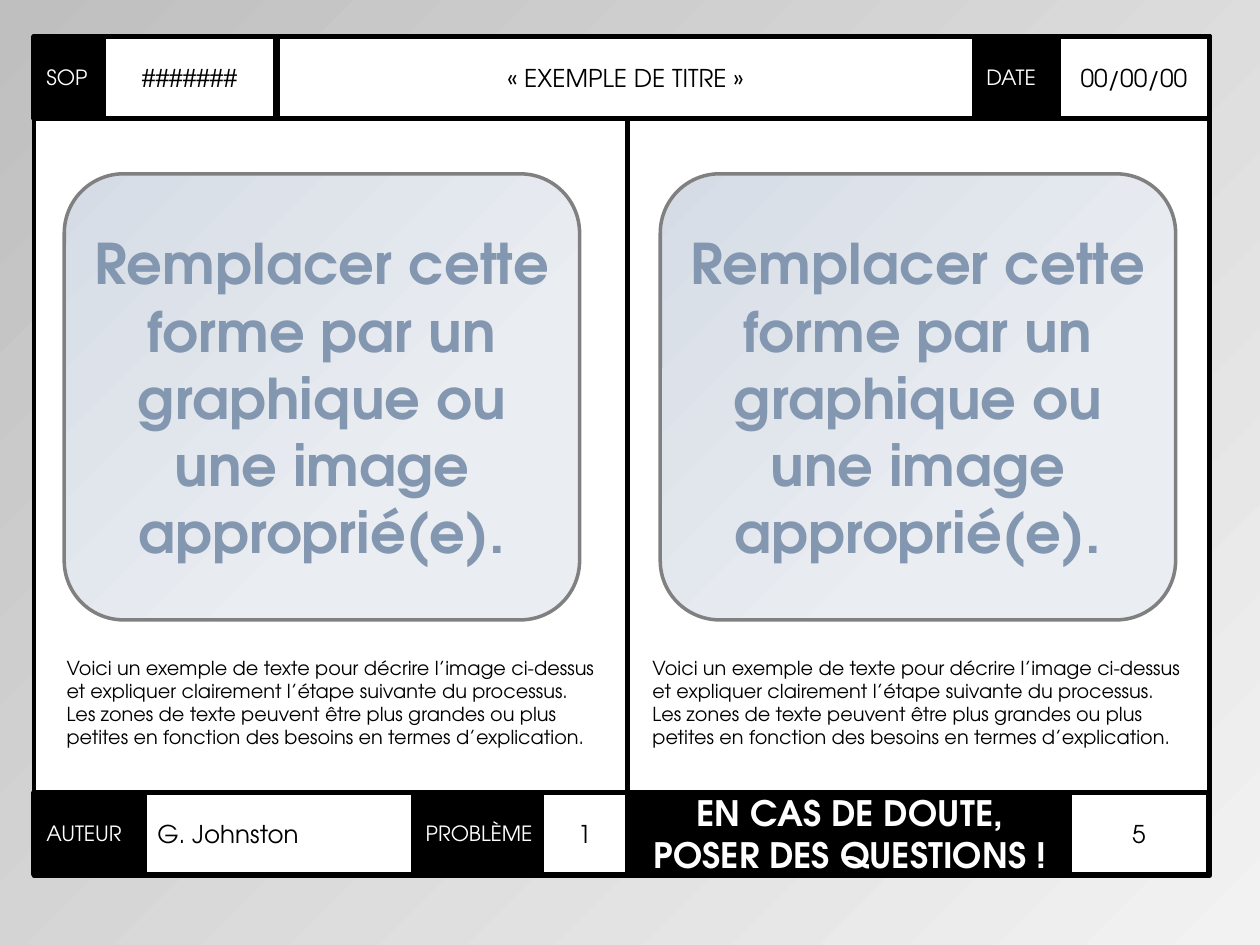
from lxml import etree
from pptx import Presentation
from pptx.dml.color import RGBColor
from pptx.enum.shapes import MSO_CONNECTOR, MSO_SHAPE
from pptx.enum.text import MSO_ANCHOR, MSO_AUTO_SIZE, PP_ALIGN
from pptx.oxml.ns import qn
from pptx.util import Inches, Pt

RECT, ROUND_RECT = MSO_SHAPE.RECTANGLE, MSO_SHAPE.ROUNDED_RECTANGLE
LEFT, CENTER = PP_ALIGN.LEFT, PP_ALIGN.CENTER
MIDDLE = MSO_ANCHOR.MIDDLE

FONT = "TeX Gyre Adventor"
BLACK = RGBColor(0x00, 0x00, 0x00)
WHITE = RGBColor(0xFF, 0xFF, 0xFF)
GREY = RGBColor(0x80, 0x80, 0x80)
SLATE = RGBColor(0x84, 0x97, 0xB0)
BLUE_LIGHT = RGBColor(0xEA, 0xEE, 0xF3)
BLUE_DARK = RGBColor(0xD6, 0xDC, 0xE5)
PAGE_LIGHT = RGBColor(0xF2, 0xF2, 0xF2)
PAGE_DARK = RGBColor(0xBF, 0xBF, 0xBF)

# Grid of the sheet, in inches
FRAME_X, FRAME_Y, FRAME_W, FRAME_H = 0.27, 0.29, 9.33, 6.66
ROW_H = 0.65
FOOTER_Y = 6.29
MIDDLE_X = 4.98
PANEL_Y = 1.38

PLACEHOLDER = "Remplacer cette forme par un graphique ou une image approprié(e)."
STEPS = [
    "Voici un exemple de texte pour décrire l’image ci-dessus et expliquer "
    "clairement l’étape suivante du processus.",
    "Les zones de texte peuvent être plus grandes ou plus petites en fonction "
    "des besoins en termes d’explication.",
]

# Text, left, width, is a black label, alignment, size
HEADER = [
    ("SOP", 0.27, 0.55, True, LEFT, 12),
    ("#######", 0.82, 1.37, False, CENTER, 14),
    ("DATE", 7.73, 0.67, True, LEFT, 12),
    ("00/00/00", 8.4, 1.2, False, CENTER, 14),
]
FOOTER = [
    ("AUTEUR", 0.27, 0.88, True, LEFT, 12),
    ("G. Johnston", 1.15, 2.56, False, LEFT, 14),
    ("EN CAS DE DOUTE, POSER DES QUESTIONS !", 5, 3.49, True, CENTER, 20),
    ("5", 8.49, 1.1, False, CENTER, 14),
    ("PROBLÈME", 3.28, 1.06, True, LEFT, 12),
    ("1", 4.3, 0.68, False, CENTER, 14),
]


def inches(*values):
    return [Inches(v) for v in values]


def set_gradient(fill, stops):
    fill.gradient()
    fill.gradient_angle = 135
    for stop, (position, color) in zip(fill.gradient_stops, stops):
        stop.position = position
        stop.color.rgb = color


def set_line(sp, color, width):
    sp.line.color.rgb = color
    sp.line.width = Pt(width)


def write(tf, paragraphs, size, color, align=LEFT, bold=False):
    tf.word_wrap = True
    for i, text in enumerate(paragraphs):
        p = tf.add_paragraph() if i else tf.paragraphs[0]
        p.alignment = align
        r = p.add_run()
        r.text = text
        r.font.name, r.font.size, r.font.bold = FONT, Pt(size), bold
        r.font.color.rgb = color


def add_box(s, shape, x, y, w, h):
    sp = s.shapes.add_shape(shape, *inches(x, y, w, h))
    sp.shadow.inherit = False
    return sp


def add_outline(s, x, y, w, h, filled):
    sp = add_box(s, RECT, x, y, w, h)
    if filled:
        sp.fill.solid()
        sp.fill.fore_color.rgb = WHITE
    else:
        sp.fill.background()
    set_line(sp, BLACK, 2.75)


def format_cell(sp, text, is_label, align, size):
    sp.fill.solid()
    sp.fill.fore_color.rgb = BLACK if is_label else WHITE
    set_line(sp, BLACK, 3 if is_label else 2.75)
    tf = sp.text_frame
    tf.vertical_anchor = MIDDLE
    write(tf, [text], size, WHITE if is_label else BLACK, align, size == 20)


def add_row(s, y, cells):
    for text, x, w, is_label, align, size in cells:
        sp = add_box(s, RECT, x, y, w, ROW_H)
        format_cell(sp, text, is_label, align, size)


def place_title(s, x, y, w, h):
    title = s.shapes.title
    title.left, title.top, title.width, title.height = inches(x, y, w, h)
    format_cell(title, "« EXEMPLE DE TITRE »", False, CENTER, 14)
    title.text_frame.auto_size = MSO_AUTO_SIZE.NONE
    s.shapes._spTree.append(title._element)  # in front of the sheet


def add_step(s, panel_x, text_x):
    # Rounded panel that stands for the illustration
    sp = add_box(s, ROUND_RECT, panel_x, PANEL_Y, 4.09, 3.54)
    sp.adjustments[0] = 0.133
    set_gradient(sp.fill, [(0.32, BLUE_LIGHT), (1, BLUE_DARK)])
    set_line(sp, GREY, 2)
    sp.text_frame.vertical_anchor = MIDDLE
    write(sp.text_frame, [PLACEHOLDER], 32, SLATE, CENTER, True)

    # Explanation below the panel
    tf = s.shapes.add_textbox(*inches(text_x, 5.16, 4.41, 0.84)).text_frame
    write(tf, STEPS, 11, BLACK)
    tf.auto_size = MSO_AUTO_SIZE.SHAPE_TO_FIT_TEXT


def add_divider(s, x, top, bottom):
    line = s.shapes.add_connector(MSO_CONNECTOR.STRAIGHT, *inches(x, top, x, bottom))
    set_line(line, BLACK, 3)
    etree.SubElement(line._element.spPr, qn("a:effectLst"))


def main():
    prs = Presentation()
    prs.slide_width, prs.slide_height = inches(10, 7.5)
    s = prs.slides.add_slide(prs.slide_layouts[5])
    set_gradient(s.background.fill, [(0, PAGE_LIGHT), (1, PAGE_DARK)])

    # Sheet and header
    add_outline(s, FRAME_X, FRAME_Y, FRAME_W, FRAME_H, True)
    add_outline(s, FRAME_X, FRAME_Y, FRAME_W, ROW_H, False)
    add_row(s, FRAME_Y, HEADER)
    place_title(s, 2.2, FRAME_Y, 5.53, ROW_H)

    # Two steps side by side
    add_step(s, 0.51, 0.43)
    add_step(s, 5.24, 5.08)
    add_divider(s, MIDDLE_X, FRAME_Y + ROW_H, FOOTER_Y)

    # Footer
    add_row(s, FOOTER_Y, FOOTER)
    prs.save("out.pptx")


if __name__ == "__main__":
    main()
